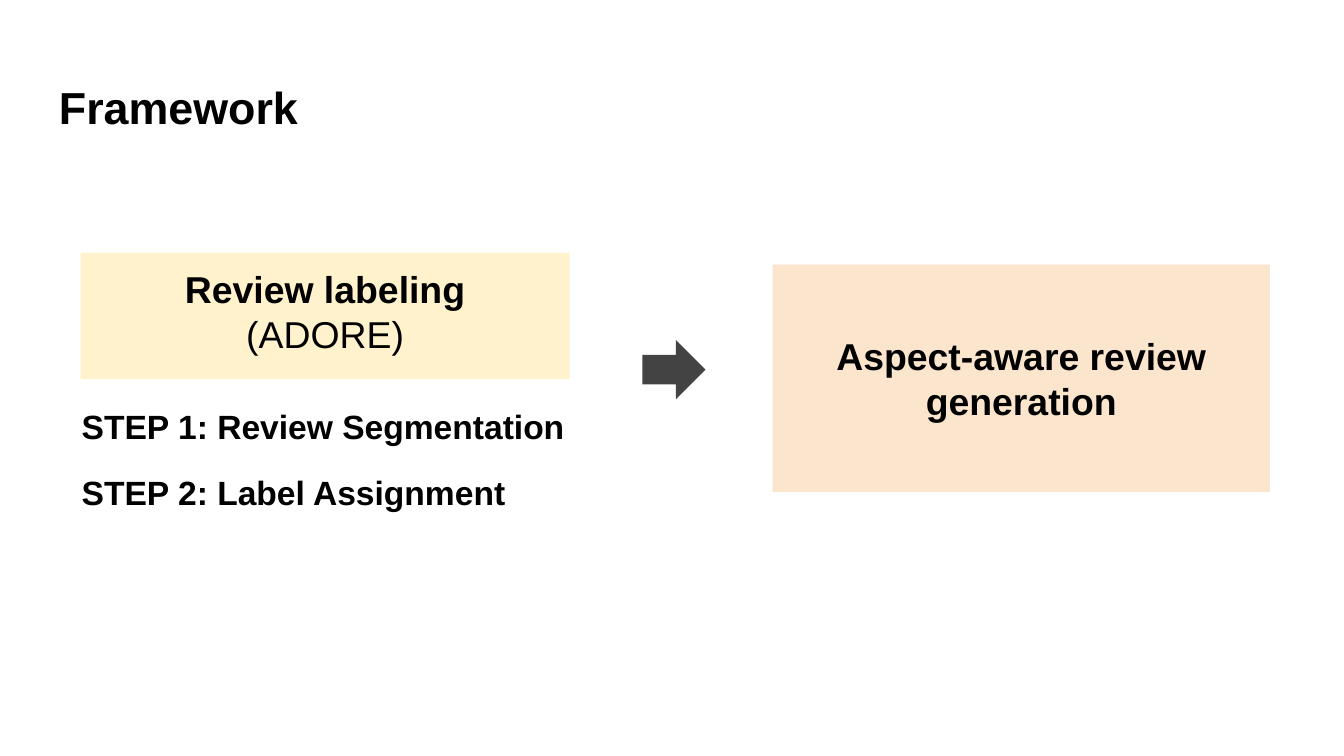
import pptx
import pptx.util
import pptx.dml.color
import pptx.enum.shapes
import pptx.enum.text
from dataclasses import dataclass

Pt = pptx.util.Pt
SHAPE = pptx.enum.shapes.MSO_SHAPE
ALIGN = pptx.enum.text.PP_ALIGN
ANCHOR = pptx.enum.text.MSO_ANCHOR


@dataclass(frozen=True)
class Theme:
    font: str = "Arial"
    text: str = "000000"
    labeling: str = "FFF2CC"
    generation: str = "FCE5CD"
    arrow: str = "434343"
    title_size: int = 24
    stage_size: int = 20
    step_size: int = 18
    inset: float = 7.2


theme = Theme()

# Text lines are (text, bold); boxes are (left, top, width, height) in points.
TITLE = [("Framework", True)]
TITLE_BOX = (24.5, 35.3, 671, 45.4)
STAGES = [
    ([("Review labeling", True), ("(ADORE)", False)],
     (43.2, 135.4, 262, 67.7), theme.labeling, ANCHOR.TOP),
    ([("Aspect-aware review generation", True)],
     (414, 141.8, 266.4, 121.7), theme.generation, ANCHOR.MIDDLE),
]
ARROW_BOX = (344.2, 182.2, 33.8, 31.7)
STEPS = ["Review Segmentation", "Label Assignment"]
STEP_LEFT, STEP_TOP, STEP_WIDTH, STEP_HEIGHT = 36.7, 210.2, 291, 36
STEP_PITCH = 35.2


def write(sp, lines, size, align=ALIGN.LEFT, anchor=ANCHOR.TOP):
    tf = sp.text_frame
    tf.word_wrap = True
    tf.vertical_anchor = anchor
    tf.margin_left = tf.margin_right = Pt(theme.inset)
    tf.margin_top = tf.margin_bottom = Pt(theme.inset)
    for i, (text, bold) in enumerate(lines):
        p = tf.add_paragraph() if i else tf.paragraphs[0]
        p.text = text
        p.alignment = align
        p.font.name = theme.font
        p.font.size = Pt(size)
        p.font.bold = bold
        p.font.color.rgb = pptx.dml.color.RGBColor.from_string(theme.text)


def add_filled(s, kind, box, fill):
    sp = s.shapes.add_shape(kind, *map(Pt, box))
    sp.shadow.inherit = False
    sp.fill.solid()
    sp.fill.fore_color.rgb = pptx.dml.color.RGBColor.from_string(fill)
    sp.line.fill.background()
    return sp


def add_text(s, box, lines, size):
    write(s.shapes.add_textbox(*map(Pt, box)), lines, size)


def main():
    prs = pptx.Presentation()
    prs.slide_width, prs.slide_height = Pt(720), Pt(405)
    s = prs.slides.add_slide(prs.slide_layouts[6])

    add_text(s, TITLE_BOX, TITLE, theme.title_size)
    for lines, box, fill, anchor in STAGES:
        sp = add_filled(s, SHAPE.RECTANGLE, box, fill)
        write(sp, lines, theme.stage_size, ALIGN.CENTER, anchor)
    add_filled(s, SHAPE.RIGHT_ARROW, ARROW_BOX, theme.arrow)
    for i, step in enumerate(STEPS):
        box = (STEP_LEFT, STEP_TOP + i * STEP_PITCH, STEP_WIDTH, STEP_HEIGHT)
        add_text(s, box, [(f"STEP {i + 1}: {step}", True)], theme.step_size)

    prs.save("out.pptx")


if __name__ == "__main__":
    main()
